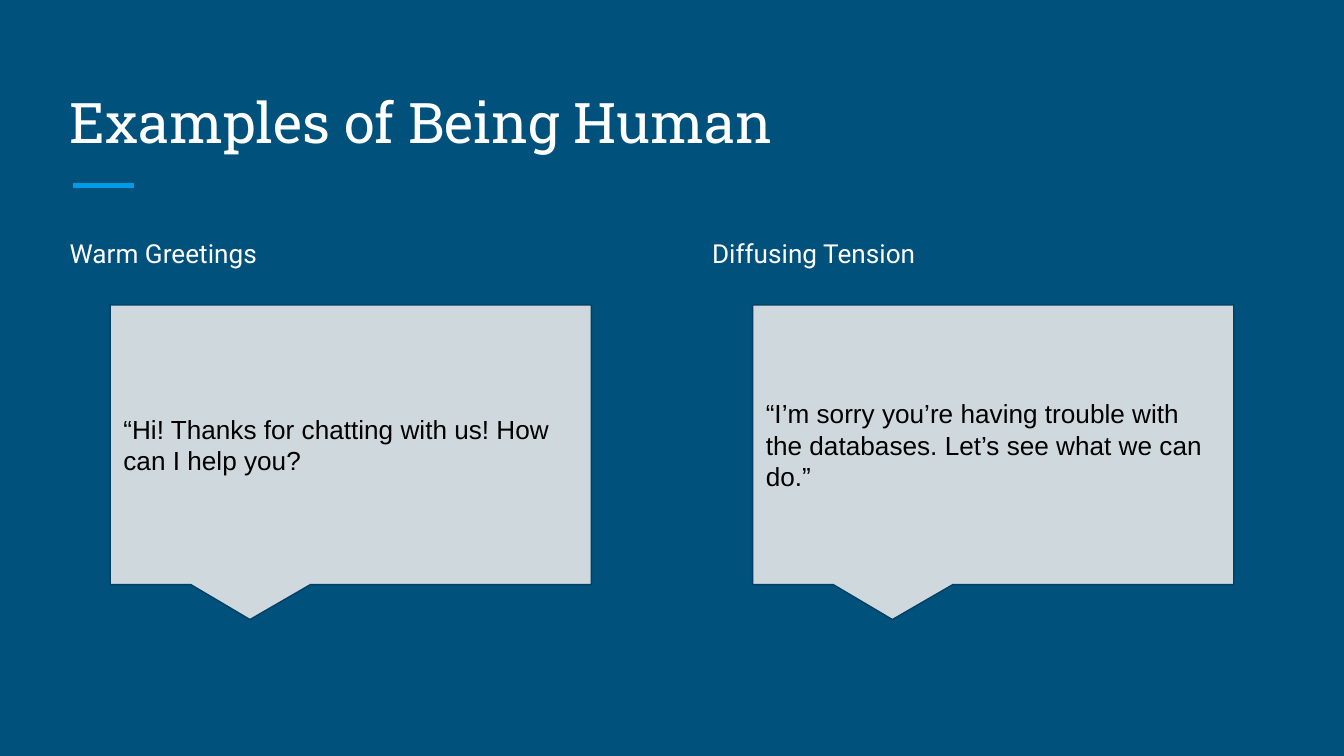
import pptx
import pptx.dml.color
import pptx.enum.shapes
import pptx.enum.text
import pptx.oxml
import pptx.util

Inches = pptx.util.Inches
Pt = pptx.util.Pt
Color = pptx.dml.color.RGBColor
Anchor = pptx.enum.text.MSO_ANCHOR

WIDTH = 10
HEIGHT = WIDTH * 9 / 16

NAVY = Color(0x00, 0x51, 0x7C)
SKY = Color(0x03, 0x9B, 0xE5)
GRAY = Color(0xCF, 0xD8, 0xDC)
EDGE = Color(0x00, 0x40, 0x65)
WHITE = Color(0xFF, 0xFF, 0xFF)
BLACK = Color(0x00, 0x00, 0x00)

TITLE = {"name": "Roboto Slab", "size": Pt(30)}
HEAD = {"name": "Roboto", "size": Pt(14)}
QUOTE = {"name": "Arial", "size": Pt(14)}
SPACE = {"line_spacing": 1.15, "space_before": Pt(12)}
FRAME = {"word_wrap": True} | {
    f"margin_{side}": Inches(0.1) for side in ("left", "top", "right", "bottom")
}
BUBBLE = [(0, 0), (3.58, 0), (3.58, 2.08), (1.49, 2.08), (1.04, 2.34),
          (0.6, 2.08), (0, 2.08)]
COLUMNS = [
    (0.42, "Warm Greetings",
     "“Hi! Thanks for chatting with us! How can I help you?", 0.64),
    (5.2, "Diffusing Tension",
     "“I’m sorry you’re having trouble with the databases. Let’s see what we can do.”",
     0.86),
]


def apply(item, values):
    """Set each named value on the item."""
    for name, value in values.items():
        setattr(item, name, value)


def add_text(shapes, text, box, font, color, anchor=Anchor.TOP, space=None):
    """Add a wrapped text box with one paragraph."""
    frame = shapes.add_textbox(*map(Inches, box)).text_frame
    apply(frame, FRAME | {"vertical_anchor": anchor})
    para = frame.paragraphs[0]
    apply(para, space or {})
    run = para.add_run()
    run.text = text
    apply(run.font, font)
    run.font.color.rgb = color


def add_rule(shapes, left, right, top):
    """Add the short accent line below the title."""
    rule = shapes.add_connector(
        pptx.enum.shapes.MSO_CONNECTOR.STRAIGHT,
        Inches(left), Inches(top), Inches(right), Inches(top))
    rule.line.color.rgb = SKY
    rule.line.width = Pt(3)
    rule._element.spPr.append(pptx.oxml.parse_xml(
        '<a:effectLst xmlns:a="http://schemas.openxmlformats.org/drawingml/2006/main"/>'))


def add_bubble(shapes, left, top, text, height):
    """Add a grouped speech bubble with its quote centred in the body."""
    group = shapes.add_group_shape().shapes
    points = [(Inches(left + x), Inches(top + y)) for x, y in BUBBLE]
    builder = group.build_freeform(*points[0], scale=1.0)
    builder.add_line_segments(points[1:], close=True)
    shape = builder.convert_to_shape()
    shape.shadow.inherit = False
    shape.fill.solid()
    shape.fill.fore_color.rgb = GRAY
    shape.line.color.rgb = EDGE
    shape.line.width = Pt(0.75)
    box = (left, top + 1.04 - height / 2, 3.57, height)
    add_text(group, text, box, QUOTE, BLACK, Anchor.MIDDLE)


def main():
    """Build the slide and save it."""
    deck = pptx.Presentation()
    apply(deck, {"slide_width": Inches(WIDTH), "slide_height": Inches(HEIGHT)})
    slide = deck.slides.add_slide(deck.slide_layouts[6])
    slide.background.fill.solid()
    slide.background.fill.fore_color.rgb = NAVY
    shapes = slide.shapes
    add_rule(shapes, 0.54, 1, 1.38)
    add_text(shapes, "Examples of Being Human", (0.42, 0.5, 9.15, 0.75),
             TITLE, WHITE, Anchor.BOTTOM)
    for left, head, quote, height in COLUMNS:
        add_text(shapes, head, (left, 1.63, 4.37, 3.37), HEAD, WHITE, space=SPACE)
        add_bubble(shapes, left + 0.4, 2.27, quote, height)
    deck.save("out.pptx")


if __name__ == "__main__":
    main()
